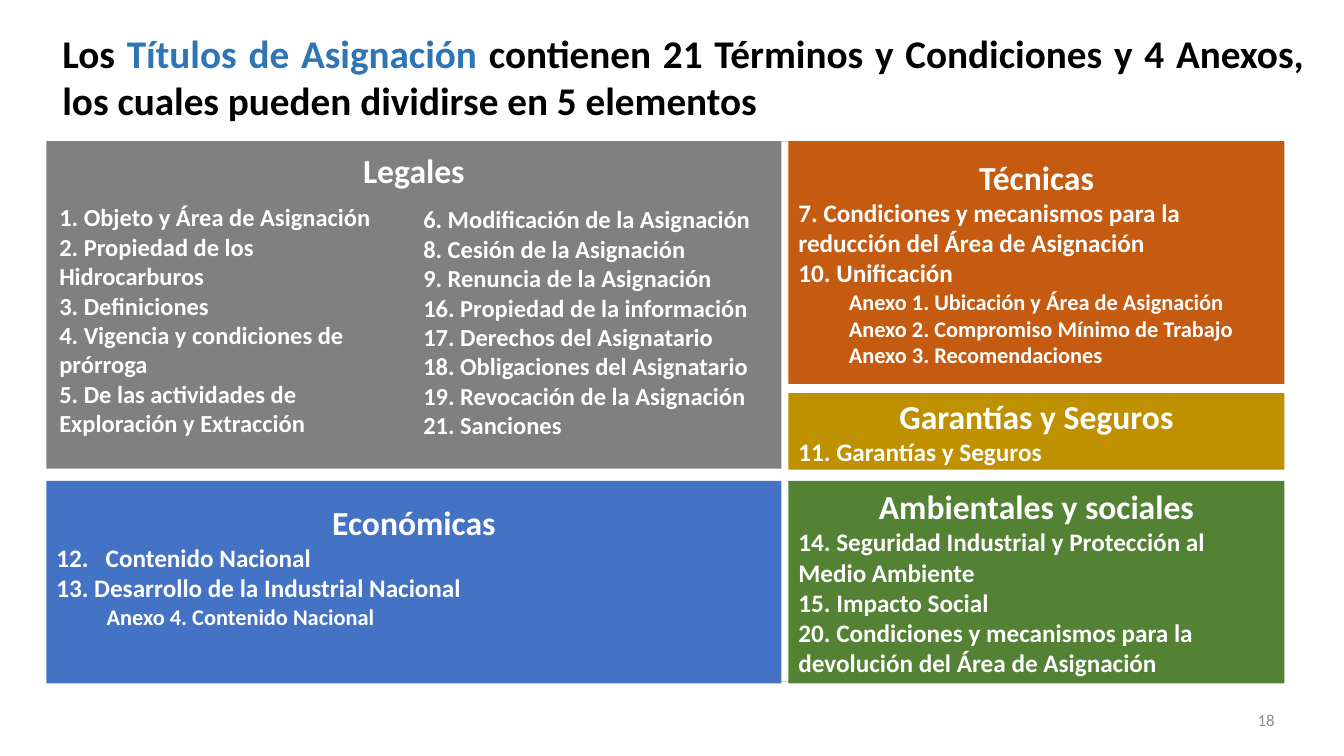
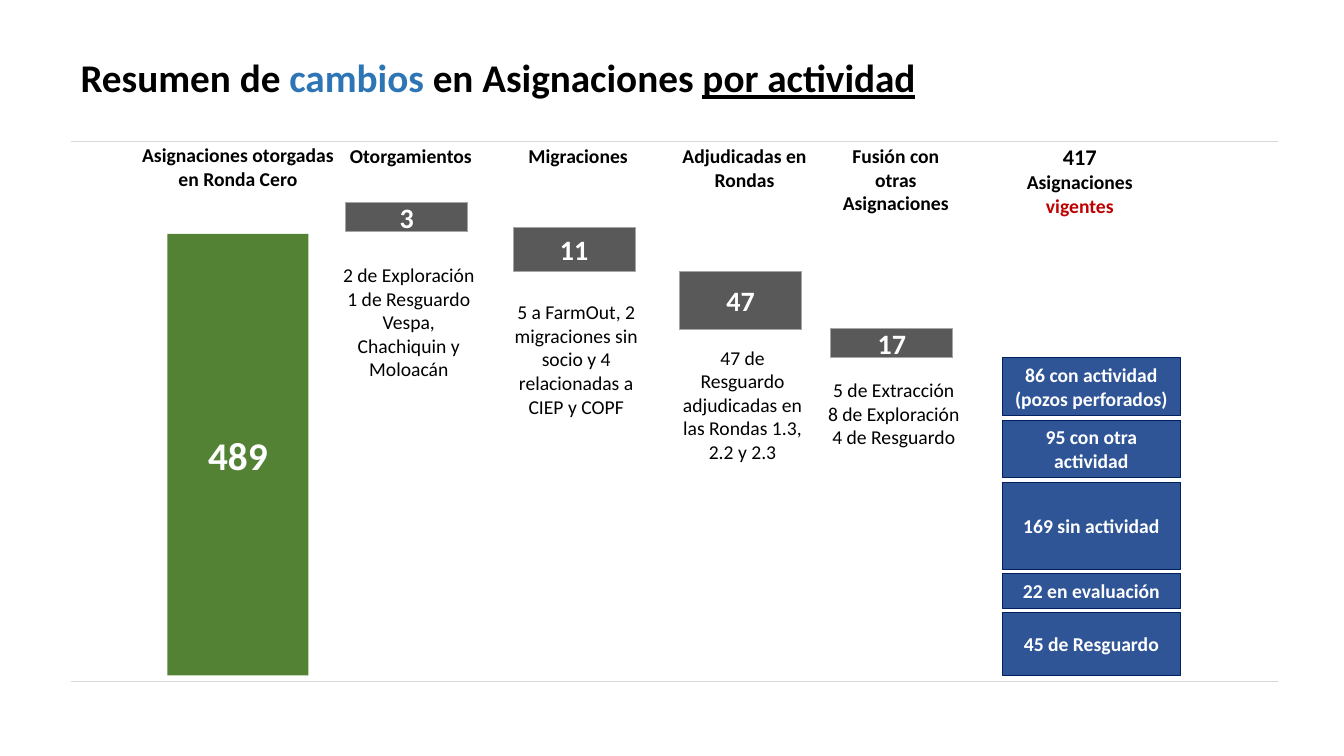
from pptx import Presentation
from pptx.dml.color import RGBColor
from pptx.enum.shapes import MSO_CONNECTOR, MSO_SHAPE
from pptx.enum.text import MSO_ANCHOR as ANCHOR, PP_ALIGN as ALIGN
from pptx.oxml.ns import qn
from pptx.util import Inches, Pt
from lxml.etree import SubElement

COLORS = {
    "black": "000000", "white": "FFFFFF", "accent": "2E75B6", "red": "C00000",
    "rule": "D9D9D9", "number": "8C8C8C", "gray": "808080", "green": "548235",
    "gold": "BF9000", "orange": "C55A11", "blue": "4472C4", "dark": "595959",
    "edge": "A5A5A5", "navy": "2F5597", "navy_edge": "002060",
}
FONT = "Calibri"
COLS, ROWS = 133.3, 75
CELL = Inches(0.1)
RULE_X, RULE_ROWS = (7, 126.8), (14, 67.6)


def cells(*values):
    """Turn grid columns and rows into slide lengths."""
    return [round(v * CELL) for v in values]


def rgb(name):
    """Return a named colour."""
    return RGBColor.from_string(COLORS[name])


def write(tf, text, size=14, color="black", bold=False, underline=None,
          align=ALIGN.CENTER, level=0, tab=None, spacing=None, new=True):
    """Add a formatted run, in a new paragraph unless told otherwise."""
    p = tf.paragraphs[-1]
    if new:
        if p.runs:
            p = tf.add_paragraph()
        p.alignment, p.line_spacing = align, spacing
        pPr = p._p.get_or_add_pPr()
        if level:
            p.level = level
            pPr.set("marL", str(level * Inches(0.5)))
            pPr.set("indent", "0")
        if tab:
            tabs = SubElement(pPr, qn("a:tabLst"))
            SubElement(tabs, qn("a:tab"), pos=str(Inches(tab)), algn="l")
    r = p.add_run()
    r.text = text
    f = r.font
    f.name, f.size, f.bold, f.underline = FONT, Pt(size), bold, underline
    f.color.rgb = rgb(color)


def text_box(s, box, anchor=ANCHOR.TOP):
    """Place a wrapping text box and return its frame."""
    tf = s.shapes.add_textbox(*cells(*box)).text_frame
    tf.word_wrap, tf.vertical_anchor = True, anchor
    return tf


def block(s, box, fill, line=None, anchor=ANCHOR.MIDDLE):
    """Place a filled rectangle and return its frame."""
    sp = s.shapes.add_shape(MSO_SHAPE.RECTANGLE, *cells(*box))
    sp.shadow.inherit = False
    sp.fill.solid()
    sp.fill.fore_color.rgb = rgb(fill)
    if line:
        sp.line.color.rgb, sp.line.width = rgb(line), Pt(0.5)
    else:
        sp.line.fill.background()
    tf = sp.text_frame
    tf.word_wrap, tf.vertical_anchor = True, anchor
    return tf


def new_slide(prs, box, title, anchor=ANCHOR.TOP, spacing=None):
    """Add a slide with its two rules and a title made of runs."""
    s = prs.slides.add_slide(prs.slide_layouts[6])
    for y in RULE_ROWS:
        cx = s.shapes.add_connector(
            MSO_CONNECTOR.STRAIGHT, *cells(RULE_X[0], y, RULE_X[1], y))
        cx.line.color.rgb, cx.line.width = rgb("rule"), Pt(0.5)
        SubElement(cx._element.spPr, qn("a:effectLst"))
    tf = text_box(s, box, anchor)
    for i, (text, fmt) in enumerate(title):
        write(tf, text, size=28, bold=True, align=ALIGN.JUSTIFY,
              spacing=spacing, new=i == 0, **fmt)
    return s


def panel(s, box, fill, heading, items=(), annexes=(), tab=None, top=None):
    """Draw a coloured panel with a heading, items and indented annexes."""
    tf = block(s, box, fill, anchor=ANCHOR.MIDDLE if top is None else ANCHOR.TOP)
    if top is not None:
        tf.margin_top = cells(top)[0]
    style = {"color": "white", "bold": True}
    write(tf, heading, size=24, **style)
    for item in items:
        write(tf, item, size=18, align=ALIGN.LEFT, tab=tab, **style)
    for annex in annexes:
        write(tf, annex, size=16, align=ALIGN.LEFT, level=1, **style)


def legal_panel(s, box, columns):
    """Draw the legal panel with two lists placed inside it."""
    x, y, w, h = box
    panel(s, box, "gray", "Legales", top=0.9)
    for (dx, dy, share), items in columns:
        tf = text_box(s, (x + dx, y + dy, w * share, h - dy))
        for item in items:
            write(tf, item, size=17.5, color="white", bold=True, align=ALIGN.LEFT)


def elements_slide(prs):
    """Build the slide of the five elements of the titles."""
    s = new_slide(prs, (5.2, 2.4, 125.1, 10.4), [
        ("Los ", {}), ("Títulos de Asignación ", {"color": "accent"}),
        ("contienen 21 Términos y Condiciones y 4 Anexos, los cuales pueden "
         "dividirse en 5 elementos", {})])
    left, left_w, right, right_w = 4.6, 72.9, 78.2, 49.2
    top, low, low_h = RULE_ROWS[0], 47.7, 20.1
    legal_panel(s, (left, top, left_w, 32.5), [
        ((0.3, 5.6, 0.48), [
            "1. Objeto y Área de Asignación", "2. Propiedad de los Hidrocarburos",
            "3. Definiciones", "4. Vigencia y condiciones de prórroga",
            "5. De las actividades de Exploración y Extracción"]),
        ((36.4, 5.8, 0.53), [
            "6. Modificación de la Asignación", "8. Cesión de la Asignación",
            "9. Renuncia de la Asignación", "16. Propiedad de la información",
            "17. Derechos del Asignatario", "18. Obligaciones del Asignatario",
            "19. Revocación de la Asignación", "21. Sanciones"])])
    panel(s, (right, top, right_w, 24.1), "orange", "Técnicas",
          ["7. Condiciones y mecanismos para la reducción del Área de Asignación",
           "10. Unificación"],
          ["Anexo 1. Ubicación y Área de Asignación",
           "Anexo 2. Compromiso Mínimo de Trabajo", "Anexo 3. Recomendaciones"])
    panel(s, (right, 39, right_w, 7.6), "gold", "Garantías y Seguros",
          ["11. Garantías y Seguros"])
    panel(s, (left, low, left_w, low_h), "blue", "Económicas",
          ["12.\tContenido Nacional", "13. Desarrollo de la Industrial Nacional"],
          ["Anexo 4. Contenido Nacional"], tab=0.49, top=2.1)
    panel(s, (right, low, right_w, low_h), "green", "Ambientales y sociales",
          ["14. Seguridad Industrial y Protección al Medio Ambiente",
           "15. Impacto Social",
           "20. Condiciones y mecanismos para la devolución del Área de Asignación"])
    write(text_box(s, (97.4, 69.4, 30, 4), ANCHOR.MIDDLE), "18", size=12,
          color="number", align=ALIGN.RIGHT)


def change_column(s, box, head, value, notes, gap, note_w):
    """Draw a change bar with its heading above and its notes below."""
    x, y, w, h = box
    mid, head_w = x + w / 2, 14.4
    write(text_box(s, (mid + 0.4 - head_w / 2, 13.8, head_w, 5.7)), head, bold=True)
    tf = block(s, box, "dark", "edge")
    write(tf, value, size=20, color="white", bold=True)
    tf = text_box(s, (mid + 0.2 - note_w / 2, y + h + gap, note_w, 12.8))
    for note in notes:
        write(tf, note)


def current_stack(s, box, parts):
    """Stack blocks of given heights with equal gaps to fill a box."""
    x, y, w, h = box
    gap = (h - sum(rows for _, rows in parts)) / (len(parts) - 1)
    for text, rows in parts:
        tf = block(s, (x, y, w, rows), "navy", "navy_edge")
        write(tf, text, color="white", bold=True)
        y += rows + gap


def changes_slide(prs):
    """Build the slide that steps from initial to current assignments."""
    s = new_slide(prs, (7, 1.9, 119.8, 12.1), [
        ("Resumen de ", {}), ("cambios", {"color": "accent"}),
        (" en Asignaciones ", {}), ("por actividad", {"underline": True})],
        ANCHOR.MIDDLE, 0.9)
    base, bar_w = 67, 12.1
    write(text_box(s, (12, 13.7, 23.2, 5.7)),
          "Asignaciones otorgadas en Ronda Cero", bold=True)
    write(block(s, (16.6, 23.2, 14, base - 23.2), "green"), "489", size=28,
          color="white", bold=True)
    for x, y, h, *details in [
        (34.3, 20.1, 2.9, "Otorgamientos", "3",
         ["2 de Exploración", "1 de Resguardo", "Vespa, Chachiquin y Moloacán"],
         2.6, 15.5),
        (50.9, 22.6, 4.3, "Migraciones", "11",
         ["5 a FarmOut, 2 migraciones sin socio y 4 relacionadas a CIEP y COPF"],
         2.4, 15.5),
        (67.4, 26.9, 5.8, "Adjudicadas en Rondas", "47",
         ["47 de Resguardo adjudicadas en las Rondas 1.3, 2.2 y 2.3"], 1.1, 14),
        (82.4, 32.6, 2.9, "Fusión con otras Asignaciones", "17",
         ["5 de Extracción", "8 de Exploración", "4 de Resguardo"], 1.5, 15.5),
    ]:
        change_column(s, (x, y, bar_w, h), *details)
    tf = text_box(s, (100.4, 13.7, 13.4, 8.4))
    write(tf, "417", size=16, bold=True)
    write(tf, "Asignaciones ", bold=True)
    write(tf, "vigentes", color="red", bold=True, new=False)
    current_stack(s, (99.4, 35.5, 17.7, base - 35.5), [
        ("86 con actividad (pozos perforados)", 5.7),
        ("95 con otra actividad", 5.7), ("169 sin actividad", 8.6),
        ("22 en evaluación", 3.4), ("45 de Resguardo", 6.2)])


def main():
    """Build and save the presentation."""
    prs = Presentation()
    prs.slide_width, prs.slide_height = cells(COLS, ROWS)
    elements_slide(prs)
    changes_slide(prs)
    prs.save("out.pptx")


if __name__ == "__main__":
    main()
